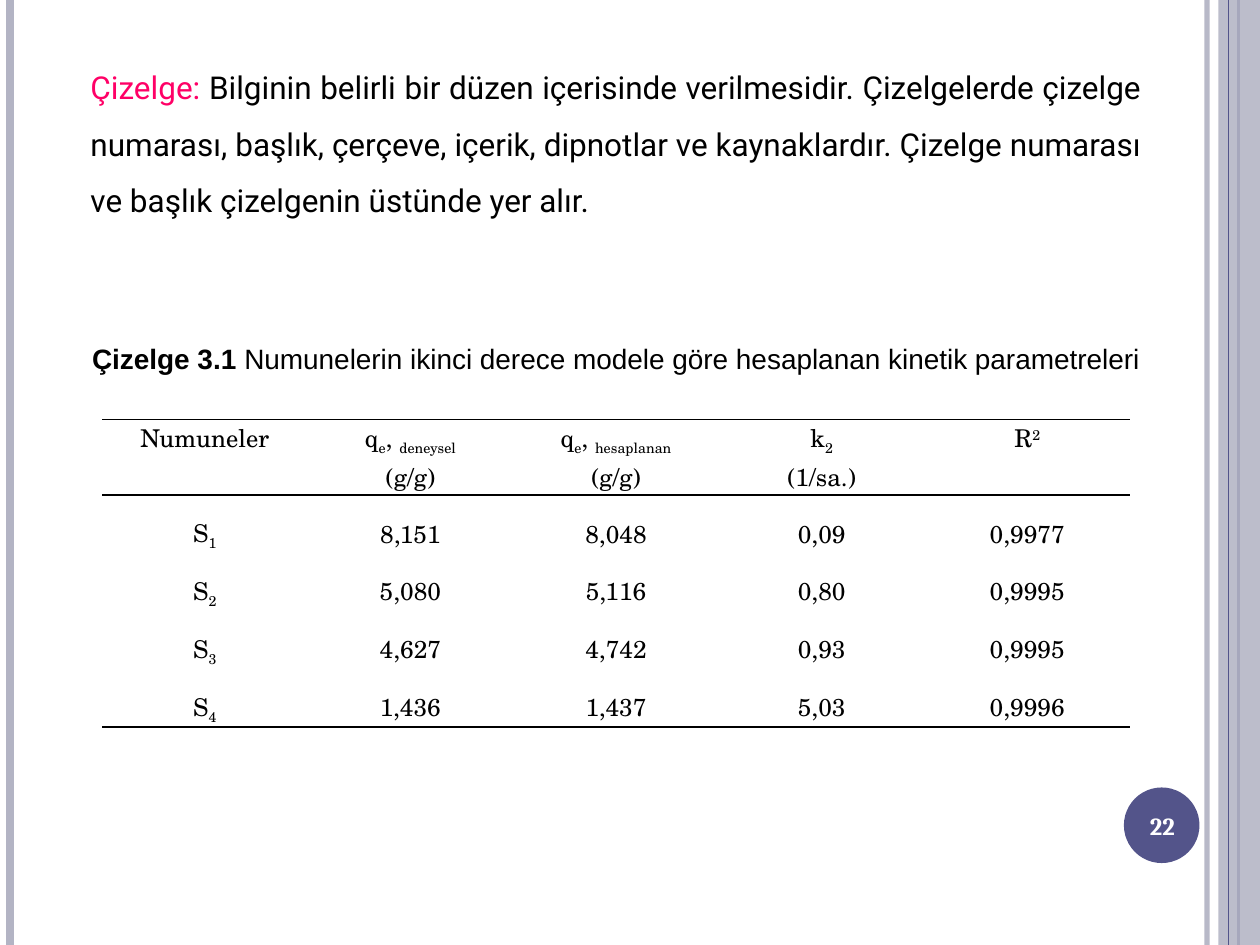
from lxml.etree import SubElement
from pptx import Presentation
from pptx.dml.color import RGBColor
from pptx.enum.shapes import MSO_CONNECTOR, MSO_SHAPE
from pptx.enum.text import MSO_ANCHOR, PP_ALIGN
from pptx.oxml.ns import qn
from pptx.util import Inches, Pt

BLACK = RGBColor(0x00, 0x00, 0x00)
WHITE = RGBColor(0xFF, 0xFF, 0xFF)
PINK = RGBColor(0xFF, 0x00, 0x66)
GREY = RGBColor(0xB3, 0xB4, 0xC4)
INDIGO = RGBColor(0x53, 0x54, 0x8A)

WIDTH, HEIGHT = 10, 7.5
SUB, SUPER = -25000, 30000

DEFINITION = [
    ("Çizelge: ", {"color": PINK}),
    ("Bilginin belirli bir düzen içerisinde verilmesidir. Çizelgelerde çizelge numarası, "
     "başlık, çerçeve, içerik, dipnotlar ve kaynaklardır. Çizelge numarası ve başlık "
     "çizelgenin üstünde yer alır.", {}),
]
CAPTION = [
    ("Çizelge 3.1 ", {"bold": True}),
    ("Numunelerin ikinci derece modele göre hesaplanan kinetik parametreleri", {}),
]


def plain(text):
    return [(text, {})]


def indexed(text, index, baseline=SUB):
    return [(text, {}), (index, {"baseline": baseline})]


def capacity(kind):
    return [indexed("q", "e") + indexed(", ", kind), plain("(g/g)")]


HEADER = [
    [plain("Numuneler")],
    capacity("deneysel"),
    capacity("hesaplanan"),
    [indexed("k", "2"), plain("(1/sa.)")],
    [indexed("R", "2", SUPER)],
]
SAMPLES = [
    ("8,151", "8,048", "0,09", "0,9977"),
    ("5,080", "5,116", "0,80", "0,9995"),
    ("4,627", "4,742", "0,93", "0,9995"),
    ("1,436", "1,437", "5,03", "0,9996"),
]
ROWS = [HEADER] + [
    [[indexed("S", str(number))]] + [[plain(value)] for value in values]
    for number, values in enumerate(SAMPLES, 1)
]
ROW_HEIGHTS = [0.6] + [0.46] * len(SAMPLES)

RULES = [
    (9.58, GREY, 3, 93),
    (0.08, GREY, 4.5, 100),
    (9.83, INDIGO, 1.5, 100),
]
INNER_RULE = (9.75, INDIGO, 0.75, 100)


def write(frame, paragraphs, font, size, color=BLACK, bold=False,
          align=PP_ALIGN.CENTER, spacing=None):
    for position, runs in enumerate(paragraphs):
        paragraph = frame.add_paragraph() if position else frame.paragraphs[0]
        paragraph.alignment = align
        if spacing:
            paragraph.line_spacing = spacing
        for text, style in runs:
            run = paragraph.add_run()
            run.text = text
            run.font.name = font
            run.font.size = Pt(size)
            run.font.bold = style.get("bold", bold)
            run.font.color.rgb = style.get("color", color)
            if "baseline" in style:
                run.font._element.set("baseline", str(style["baseline"]))


def add_text(slide, box, paragraphs, anchor=MSO_ANCHOR.TOP, **style):
    frame = slide.shapes.add_textbox(*map(Inches, box)).text_frame
    frame.word_wrap = True
    frame.vertical_anchor = anchor
    write(frame, paragraphs, **style)


def set_alpha(shape, percent):
    color = next(shape._element.spPr.iter(qn("a:srgbClr")))
    SubElement(color, qn("a:alpha")).set("val", str(percent * 1000))


def add_rule(slide, x, color, width, opacity):
    line = slide.shapes.add_connector(
        MSO_CONNECTOR.STRAIGHT, Inches(x), 0, Inches(x), Inches(HEIGHT))
    line.line.color.rgb = color
    line.line.width = Pt(width)
    if opacity < 100:
        set_alpha(line, opacity)
    SubElement(line._element.spPr, qn("a:effectLst"))


def add_solid(slide, kind, box, color):
    shape = slide.shapes.add_shape(kind, *map(Inches, box))
    shape.shadow.inherit = False
    shape.fill.solid()
    shape.fill.fore_color.rgb = color
    shape.line.fill.background()
    return shape


def set_borders(cell, visible):
    properties = cell._tc.get_or_add_tcPr()
    for side in "LRTB":
        border = SubElement(properties, qn("a:ln" + side))
        border.set("w", str(Pt(1)))
        if side in visible:
            fill = SubElement(border, qn("a:solidFill"))
            SubElement(fill, qn("a:srgbClr")).set("val", str(BLACK))
        else:
            SubElement(border, qn("a:noFill"))


def add_results(slide):
    table = slide.shapes.add_table(
        len(ROWS), len(HEADER), Inches(0.81), Inches(3.33),
        Inches(8.16), Inches(sum(ROW_HEIGHTS))).table
    table.first_row = table.horz_banding = False
    visible = {0: "TB", 1: "T", len(ROWS) - 1: "B"}
    for row, (contents, height) in enumerate(zip(ROWS, ROW_HEIGHTS)):
        table.rows[row].height = Inches(height)
        for column, paragraphs in enumerate(contents):
            cell = table.cell(row, column)
            cell.margin_left = cell.margin_right = Inches(0.07)
            cell.margin_top = cell.margin_bottom = 0
            cell.vertical_anchor = MSO_ANCHOR.MIDDLE if row else MSO_ANCHOR.TOP
            set_borders(cell, visible.get(row, ""))
            cell.fill.background()
            write(cell.text_frame, paragraphs, "TeX Gyre Schola", 14,
                  spacing=1.5 if row else None)


def main():
    presentation = Presentation()
    presentation.slide_width = Inches(WIDTH)
    presentation.slide_height = Inches(HEIGHT)
    slide = presentation.slides.add_slide(presentation.slide_layouts[6])

    for rule in RULES:
        add_rule(slide, *rule)
    band = add_solid(slide, MSO_SHAPE.RECTANGLE, (9.67, 0, 0.33, HEIGHT), GREY)
    set_alpha(band, 87)
    add_rule(slide, *INNER_RULE)
    add_solid(slide, MSO_SHAPE.OVAL, (8.92, 6.25, 0.6, 0.6), INDIGO)
    add_text(slide, (8.89, 6.27, 0.67, 0.57), [plain("22")], MSO_ANCHOR.MIDDLE,
             font="Cambria", size=14, color=WHITE, bold=True)

    add_results(slide)
    add_text(slide, (0.36, 2.66, 9.06, 0.37), [CAPTION], font="Arial", size=16)
    add_text(slide, (0.62, 0.34, 8.54, 1.46), [DEFINITION], font="Roboto", size=18,
             align=PP_ALIGN.JUSTIFY, spacing=1.5)
    presentation.save("out.pptx")


if __name__ == "__main__":
    main()
